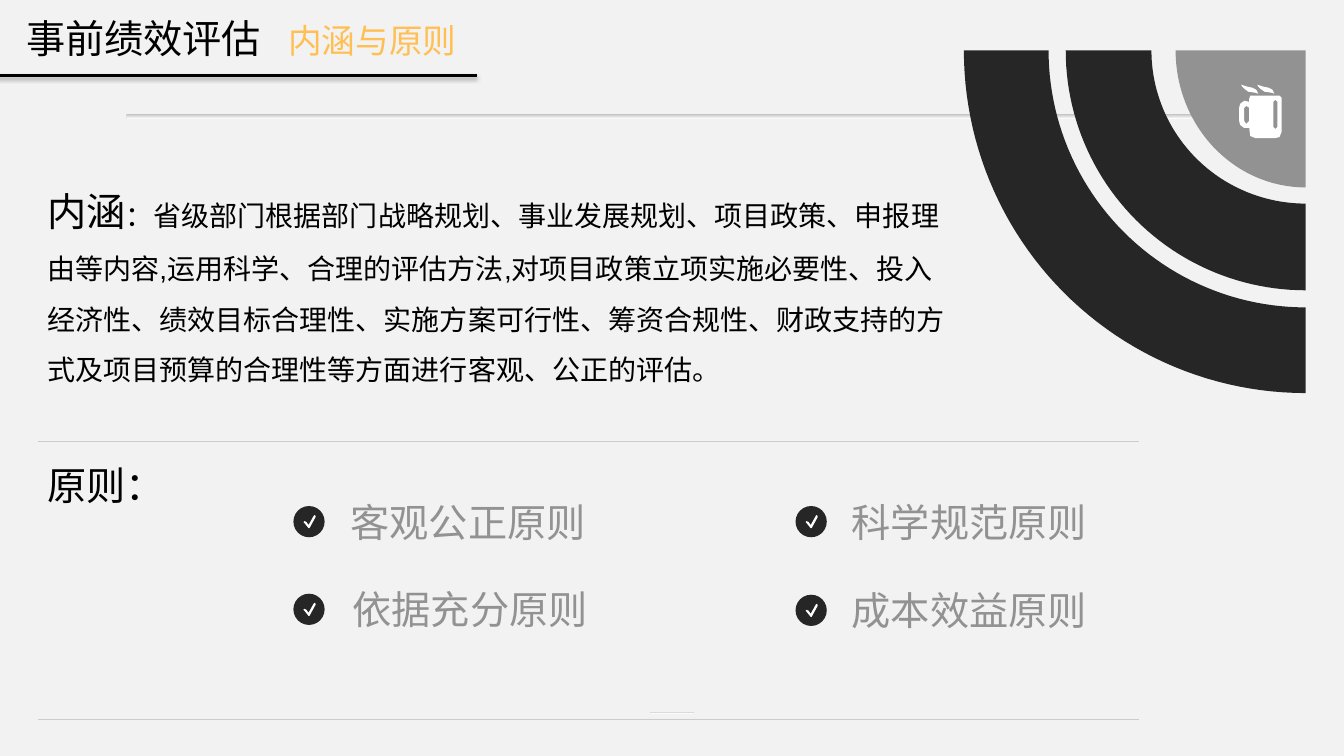
"""Build the slide on the meaning and principles of ex-ante performance evaluation."""
from math import cos, pi, sin

from lxml.etree import SubElement
from pptx import Presentation
from pptx.dml.color import RGBColor
from pptx.enum.shapes import MSO_CONNECTOR, MSO_SHAPE
from pptx.enum.text import MSO_AUTO_SIZE
from pptx.oxml.ns import qn
from pptx.util import Inches, Pt

COLORS = {"bg": "F2F2F2", "dark": "262626", "gray": "929292", "rule": "CCCCCC",
          "silver": "BFBFBF", "gold": "FFBF53", "black": "000000", "white": "FFFFFF"}
LATIN, CJK = "Arial", "Noto Sans CJK SC"

TITLE = [("事前绩效评估\t", 28, "black"), ("内涵与原则", 24, "gold")]
MEANING = [("内涵", 28, "black"),
           ("：省级部门根据部门战略规划、事业发展规划、项目政策、申报理由等内容,运用科学、合理的评估方法,"
            "对项目政策立项实施必要性、投入经济性、绩效目标合理性、实施方案可行性、筹资合规性、"
            "财政支持的方式及项目预算的合理性等方面进行客观、公正的评估。", 20, "black")]
PRINCIPLES_HEAD = [("原则：", 28, "black")]
PRINCIPLES = [("客观公正原则", 2.91, 5.02, 3.38), ("依据充分原则", 2.91, 5.89, 3.4),
              ("科学规范原则", 7.89, 5.02, 8.35), ("成本效益原则", 7.89, 5.9, 8.35)]

BARS = [(1.25, 1.13, 10.84, 0.05), (6.45, 7.06, 0.43, 0.02)]
RULES = [(0.38, 11.3, 4.38), (0.38, 11.3, 7.14)]
CORNER = (12.95, 0.5)
ARCS = [((2.38, 2.38), (1.53, 1.52), "dark"), ((1.29, 1.36), (0, 0), "gray"),
        ((3.39, 3.4), (2.55, 2.55), "dark")]

TICK = [(0.05, 0.13), (0.01, 0.08), (0, 0.07), (0.01, 0.06), (0.03, 0.07), (0.05, 0.1),
        (0.1, 0.01), (0.11, 0), (0.12, 0.01), (0.12, 0.02), (0.06, 0.13)]
MUG = [(12.39, 0.98), (12.4, 0.95), (12.69, 0.95), (12.71, 0.97), (12.71, 1.31),
       (12.69, 1.36), (12.65, 1.37), (12.45, 1.37), (12.4, 1.35), (12.39, 1.27),
       (12.34, 1.27), (12.3, 1.24), (12.29, 1.2), (12.29, 1.07), (12.3, 1.03),
       (12.34, 1), (12.39, 1.01)]
HANDLE_HOLE = [(12.36, 1.05), (12.34, 1.07), (12.34, 1.2), (12.36, 1.23),
               (12.39, 1.2), (12.39, 1.07)]
SLOT = [(12.65, 0.99), (12.63, 1.01), (12.63, 1.26), (12.65, 1.28), (12.67, 1.26), (12.67, 1.01)]
STEAM = [(12.31, 0.84), (12.37, 0.86), (12.42, 0.87), (12.46, 0.89), (12.48, 0.93),
         (12.45, 0.92), (12.38, 0.91), (12.34, 0.88), (12.32, 0.86)]


def rgb(name):
    return RGBColor.from_string(COLORS[name])


def shift(points, dx, dy):
    return [(x + dx, y + dy) for x, y in points]


def paint(sp, color):
    sp.shadow.inherit = False
    sp.fill.solid()
    sp.fill.fore_color.rgb = rgb(color)
    sp.line.fill.background()


def add_outline(s, contours, color):
    contours = [[(Inches(x), Inches(y)) for x, y in contour] for contour in contours]
    fb = s.shapes.build_freeform(*contours[0][0])
    for i, contour in enumerate(contours):
        if i:
            fb.move_to(*contour[0])
        fb.add_line_segments(contour[1:], close=True)
    paint(fb.convert_to_shape(), color)


def arc(radii, steps=48):
    (cx, cy), (rx, ry) = CORNER, radii
    angles = [pi / 2 * i / steps for i in range(steps + 1)]
    return [(cx - rx * cos(a), cy + ry * sin(a)) for a in angles]


def add_line(s, x1, x2, y, color, width):
    cx = s.shapes.add_connector(MSO_CONNECTOR.STRAIGHT, *map(Inches, (x1, y, x2, y)))
    cx.line.color.rgb = rgb(color)
    cx.line.width = Pt(width)
    return SubElement(cx._element.spPr, qn("a:effectLst"))


def add_text(s, box, runs, latin=LATIN, spacing=1, wrap=True, inset=True):
    tf = s.shapes.add_textbox(*map(Inches, box)).text_frame
    tf.word_wrap = wrap
    tf.auto_size = MSO_AUTO_SIZE.SHAPE_TO_FIT_TEXT
    if not inset:
        tf.margin_left = tf.margin_top = tf.margin_right = tf.margin_bottom = 0
    p = tf.paragraphs[0]
    p.line_spacing = spacing
    p.font.name = latin
    for text, size, color in runs:
        r = p.add_run()
        r.text = text
        r.font.size = Pt(size)
        r.font.color.rgb = rgb(color)
        r.font.name = latin
        SubElement(r._r.get_or_add_rPr(), qn("a:ea"), typeface=CJK)
    return p


def main():
    prs = Presentation()
    prs.slide_width, prs.slide_height = Inches(13.33), Inches(7.5)
    s = prs.slides.add_slide(prs.slide_layouts[6])
    s.background.fill.solid()
    s.background.fill.fore_color.rgb = rgb("bg")

    for box in BARS:
        sp = s.shapes.add_shape(MSO_SHAPE.ROUNDED_RECTANGLE, *map(Inches, box))
        sp.adjustments[0] = 0.5
        paint(sp, "silver")
        sp.fill.gradient()
        sp.fill.gradient_angle = 270
        for stop, color in zip(sp.fill.gradient_stops, ("silver", "white")):
            stop.color.rgb = rgb(color)

    for outer, inner, color in ARCS:
        add_outline(s, [arc(outer) + arc(inner)[::-1]], color)
    add_outline(s, [MUG, HANDLE_HOLE, SLOT, STEAM, shift(STEAM, 0.16, 0)], "white")

    for x1, x2, y in RULES:
        add_line(s, x1, x2, y, "rule", 0.5)
    add_text(s, (0.37, 1.58, 9.18, 2.32), MEANING, spacing=1.5)
    add_text(s, (0.37, 4.29, 1.37, 0.72), PRINCIPLES_HEAD, spacing=1.5)

    for text, x, y, text_x in PRINCIPLES:
        add_text(s, (text_x, y - 0.13, 2.56, 0.57), [(text, 28, "gray")], wrap=False)
        dot = s.shapes.add_shape(MSO_SHAPE.OVAL, *map(Inches, (x, y, 0.31, 0.31)))
        paint(dot, "dark")
        add_outline(s, [shift(TICK, x + 0.1, y + 0.09)], "white")

    p = add_text(s, (0.26, 0.14, 4.46, 0.56), TITLE, latin=CJK, inset=False)
    tabs = SubElement(p._p.get_or_add_pPr(), qn("a:tabLst"))
    SubElement(tabs, qn("a:tab"), pos=str(Inches(2.6)), algn="l")
    p._p.pPr.insert(1, tabs)
    effects = add_line(s, -0.03, 4.73, 0.75, "black", 2)
    shadow = SubElement(effects, qn("a:outerShdw"), blurRad=str(Pt(3.1)), dist=str(Pt(1.6)),
                        dir="5400000", rotWithShape="0")
    tint = SubElement(shadow, qn("a:srgbClr"), val=COLORS["black"])
    SubElement(tint, qn("a:alpha"), val="38000")

    prs.save("out.pptx")


if __name__ == "__main__":
    main()
